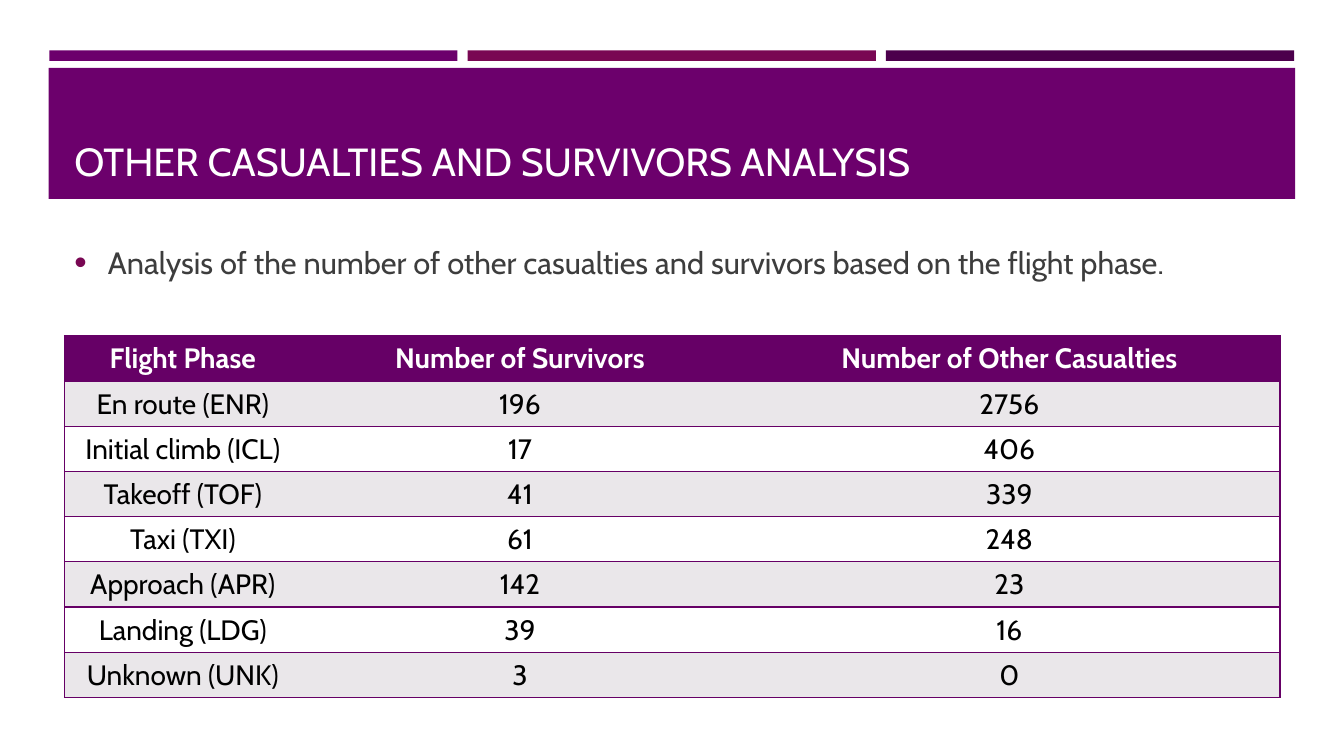
from lxml.etree import SubElement
from pptx import Presentation
from pptx.dml.color import RGBColor
from pptx.enum.shapes import MSO_SHAPE as Shape
from pptx.enum.text import MSO_ANCHOR as Anchor, PP_ALIGN as Align
from pptx.oxml.ns import qn
from pptx.util import Pt

COLORS = {
    "purple": "6C006C",
    "berry": "790753",
    "plum": "4C004C",
    "table": "660066",
    "band": "EAE7EA",
    "white": "FFFFFF",
    "black": "000000",
    "gray": "3D3D3D",
}
MARGIN, CONTENT_WIDTH = 46, 868.3


def color(name):
    return RGBColor.from_string(COLORS[name])


def write(frame, text, size, ink, bold=False, align=Align.LEFT, anchor=Anchor.MIDDLE):
    """Fill a text frame or table cell and return its paragraph."""
    frame.vertical_anchor = anchor
    frame.word_wrap = True
    paragraph = getattr(frame, "text_frame", frame).paragraphs[0]
    paragraph.alignment = align
    run = paragraph.add_run()
    run.text = text
    run.font.name = "Cabin"
    run.font.size = Pt(size)
    run.font.bold = bold
    run.font.color.rgb = color(ink)
    return paragraph


presentation = Presentation()
presentation.slide_width = Pt(960)
presentation.slide_height = Pt(540)
slide = presentation.slides.add_slide(presentation.slide_layouts[6])

# Three accent bars above the title banner
blocks = [(35.2 + 298.8 * i, 36, 291.6, 7.5, name)
          for i, name in enumerate(["purple", "berry", "plum"])]
blocks.append((34.8, 48.5, 890.4, 93.6, "purple"))
for left, top, width, height, name in blocks:
    block = slide.shapes.add_shape(Shape.RECTANGLE, Pt(left), Pt(top), Pt(width), Pt(height))
    block.shadow.inherit = False
    block.fill.solid()
    block.fill.fore_color.rgb = color(name)
    block.line.fill.background()

# Title and bullet
title = slide.shapes.add_textbox(Pt(MARGIN), Pt(55.4), Pt(CONTENT_WIDTH), Pt(80))
write(title.text_frame, "OTHER CASUALTIES AND SURVIVORS ANALYSIS", 28, "white",
      anchor=Anchor.BOTTOM)

body = slide.shapes.add_textbox(Pt(MARGIN), Pt(147.6), Pt(CONTENT_WIDTH), Pt(80))
bullet = write(
    body.text_frame,
    "Analysis of the number of other casualties and survivors based on the flight phase.",
    22, "gray")
bullet.space_before = Pt(4.4)
bullet.space_after = Pt(6)
properties = bullet._p.get_or_add_pPr()
properties.set("marL", str(Pt(24)))
properties.set("indent", str(Pt(-24)))
bullet_color = SubElement(properties, qn("a:buClr"))
SubElement(bullet_color, qn("a:srgbClr"), val=COLORS["berry"])
SubElement(properties, qn("a:buSzPct"), val="115000")
SubElement(properties, qn("a:buFont"), typeface="Arial")
SubElement(properties, qn("a:buChar"), char="•")

# Table of flight phases
rows = [
    ("Flight Phase", "Number of Survivors", "Number of Other Casualties"),
    ("En route (ENR)", "196", "2756"),
    ("Initial climb (ICL)", "17", "406"),
    ("Takeoff (TOF)", "41", "339"),
    ("Taxi (TXI)", "61", "248"),
    ("Approach (APR)", "142", "23"),
    ("Landing (LDG)", "39", "16"),
    ("Unknown (UNK)", "3", "0"),
]
column_widths = [169.2, 312.5, 386.6]
row_height = 32.3
table = slide.shapes.add_table(
    len(rows), len(column_widths), Pt(MARGIN), Pt(239.8),
    Pt(CONTENT_WIDTH), Pt(row_height * len(rows))).table
for column, width in zip(table.columns, column_widths):
    column.width = Pt(width)

# Every cell has lines above and below; only the table's outer sides are drawn
side_lines = [("L",), (), ("R",)]
for i, values in enumerate(rows):
    table.rows[i].height = Pt(row_height)
    header = i == 0
    fill = "table" if header else "band" if i % 2 else "white"
    for j, value in enumerate(values):
        cell = table.cell(i, j)
        cell.margin_left = cell.margin_right = cell.margin_top = Pt(0.7)
        cell.margin_bottom = 0
        write(cell, value, 20, "white" if header else "black", bold=header,
              align=Align.CENTER)
        cell_properties = cell._tc.get_or_add_tcPr()
        for side in "LRTB":
            drawn = side in "TB" or side in side_lines[j]
            border = SubElement(cell_properties, qn(f"a:ln{side}"),
                                w=str(Pt(1 if drawn else 0)))
            if drawn:
                line_fill = SubElement(border, qn("a:solidFill"))
                SubElement(line_fill, qn("a:srgbClr"), val=COLORS["table"])
            else:
                SubElement(border, qn("a:noFill"))
        cell.fill.solid()
        cell.fill.fore_color.rgb = color(fill)

presentation.save("out.pptx")
